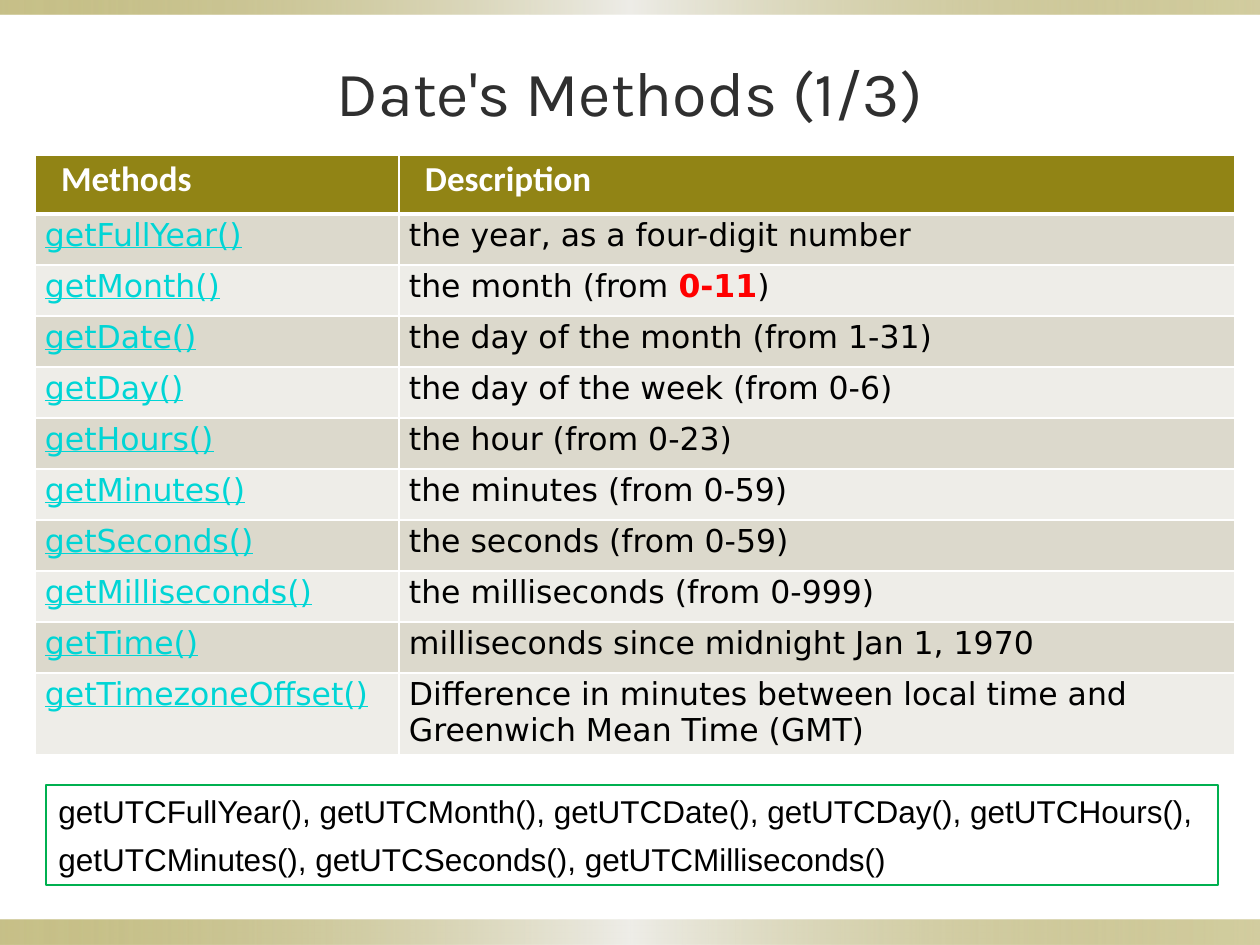
"""Build the slide listing the getter methods of Date."""
from lxml import etree
from pptx import Presentation
from pptx.dml.color import RGBColor
from pptx.enum.shapes import MSO_SHAPE as Shape
from pptx.enum.text import MSO_ANCHOR as Anchor, PP_ALIGN as Align
from pptx.oxml.ns import qn
from pptx.util import Emu, Pt

SCALE = 914400 / 126
COLORS = {
    "olive": "918415", "band": "DCD9CC", "pale": "EEEDE8", "title": "2F2F2F",
    "link": "00D5D5", "red": "FF0000", "green": "00B050",
    "black": "000000", "white": "FFFFFF",
}
TITLE = {"name": "Karla", "size": Pt(36)}
HEADER = {"name": "Calibri", "size": Pt(20), "bold": True}
BODY = {"name": "DejaVu Sans", "size": Pt(18), "bold": False}
LINK = {**BODY, "underline": True}
STRONG = {**BODY, "bold": True}
NOTE = {"name": "Arial", "size": Pt(18)}

BARS = [(920, 25), (0, 15)]
BAR_STOPS = [(0, "olive", 50), (50, "pale", 100), (100, "olive", 40)]
COLUMN_WIDTHS = [364, 836]
HEADINGS = ["Methods", "Description"]
METHODS = [
    ("getFullYear()", ["the year, as a four-digit number"]),
    ("getMonth()", ["the month (from ", "0-11", ")"]),
    ("getDate()", ["the day of the month (from 1-31)"]),
    ("getDay()", ["the day of the week (from 0-6)"]),
    ("getHours()", ["the hour (from 0-23)"]),
    ("getMinutes()", ["the minutes (from 0-59)"]),
    ("getSeconds()", ["the seconds (from 0-59)"]),
    ("getMilliseconds()", ["the milliseconds (from 0-999)"]),
    ("getTime()", ["milliseconds since midnight Jan 1, 1970"]),
    ("getTimezoneOffset()",
     ["Difference in minutes between local time and Greenwich Mean Time (GMT)"]),
]
UTC_LINES = [
    "getUTCFullYear(), getUTCMonth(), getUTCDate(), getUTCDay(), getUTCHours(),",
    "getUTCMinutes(), getUTCSeconds(), getUTCMilliseconds()",
]


def px(*lengths):
    return [Emu(round(length * SCALE)) for length in lengths]


def add_run(paragraph, text, style, color):
    run = paragraph.add_run()
    run.text = text
    for name, value in style.items():
        setattr(run.font, name, value)
    run.font.color.rgb = RGBColor.from_string(COLORS[color])


presentation = Presentation()
presentation.slide_width, presentation.slide_height = px(1260, 945)
slide = presentation.slides.add_slide(presentation.slide_layouts[6])

for top, height in BARS:
    bar = slide.shapes.add_shape(Shape.RECTANGLE, *px(0, top, 1260, height))
    bar.shadow.inherit = False
    bar.line.fill.background()
    bar.fill.gradient()
    bar.fill.gradient_angle = 0
    stops = bar._element.spPr.find(qn("a:gradFill")).find(qn("a:gsLst"))
    for stop in list(stops):
        stops.remove(stop)
    for position, color, opacity in BAR_STOPS:
        stop = etree.SubElement(stops, qn("a:gs"), pos=str(position * 1000))
        shade = etree.SubElement(stop, qn("a:srgbClr"), val=COLORS[color])
        etree.SubElement(shade, qn("a:alpha"), val=str(opacity * 1000))

title = slide.shapes.add_textbox(*px(63, 38, 1134, 107)).text_frame
title.word_wrap = True
title.vertical_anchor = Anchor.MIDDLE
title.paragraphs[0].alignment = Align.CENTER
add_run(title.paragraphs[0], "Date's Methods (1/3)", TITLE, "title")

rows = [[[(heading, HEADER, "white")] for heading in HEADINGS]]
for method, description in METHODS:
    parts = [(text, STRONG, "red") if index % 2 else (text, BODY, "black")
             for index, text in enumerate(description)]
    rows.append([[(method, LINK, "link")], parts])
row_heights = [59] + [51] * (len(METHODS) - 1) + [81]

table = slide.shapes.add_table(
    len(rows), 2, *px(35, 155, sum(COLUMN_WIDTHS), sum(row_heights))).table
table.first_row = table.horz_banding = False
for column, width in zip(table.columns, px(*COLUMN_WIDTHS)):
    column.width = width
for row, height in zip(table.rows, px(*row_heights)):
    row.height = height

for row_index, row in enumerate(rows):
    is_header = row_index == 0
    fill = "olive" if is_header else "band" if row_index % 2 else "pale"
    for column_index, parts in enumerate(row):
        cell = table.cell(row_index, column_index)
        margins = px(26 if is_header else 10, 3, 3, 3)
        for side, margin in zip(["left", "top", "right", "bottom"], margins):
            setattr(cell, f"margin_{side}", margin)
        for side in ["L", "R", "T", "B"]:
            thick = is_header and side == "B" or row_index == 1 and side == "T"
            border = etree.SubElement(cell._tc.get_or_add_tcPr(), qn(f"a:ln{side}"),
                                      w=str(Pt(3 if thick else 1)))
            paint = etree.SubElement(border, qn("a:solidFill"))
            etree.SubElement(paint, qn("a:srgbClr"), val=COLORS["white"])
        cell.fill.solid()
        cell.fill.fore_color.rgb = RGBColor.from_string(COLORS[fill])
        for part in parts:
            add_run(cell.text_frame.paragraphs[0], *part)

box = slide.shapes.add_shape(Shape.RECTANGLE, *px(46, 785, 1172, 100))
box.shadow.inherit = False
box.fill.background()
box.line.color.rgb = RGBColor.from_string(COLORS["green"])
box.line.width = Pt(0.75)
frame = box.text_frame
frame.word_wrap = True
frame.vertical_anchor = Anchor.MIDDLE
for index, line in enumerate(UTC_LINES):
    paragraph = frame.add_paragraph() if index else frame.paragraphs[0]
    paragraph.alignment = Align.LEFT
    if index:
        paragraph.space_before = Pt(6)
    add_run(paragraph, line, NOTE, "black")

presentation.save("out.pptx")
